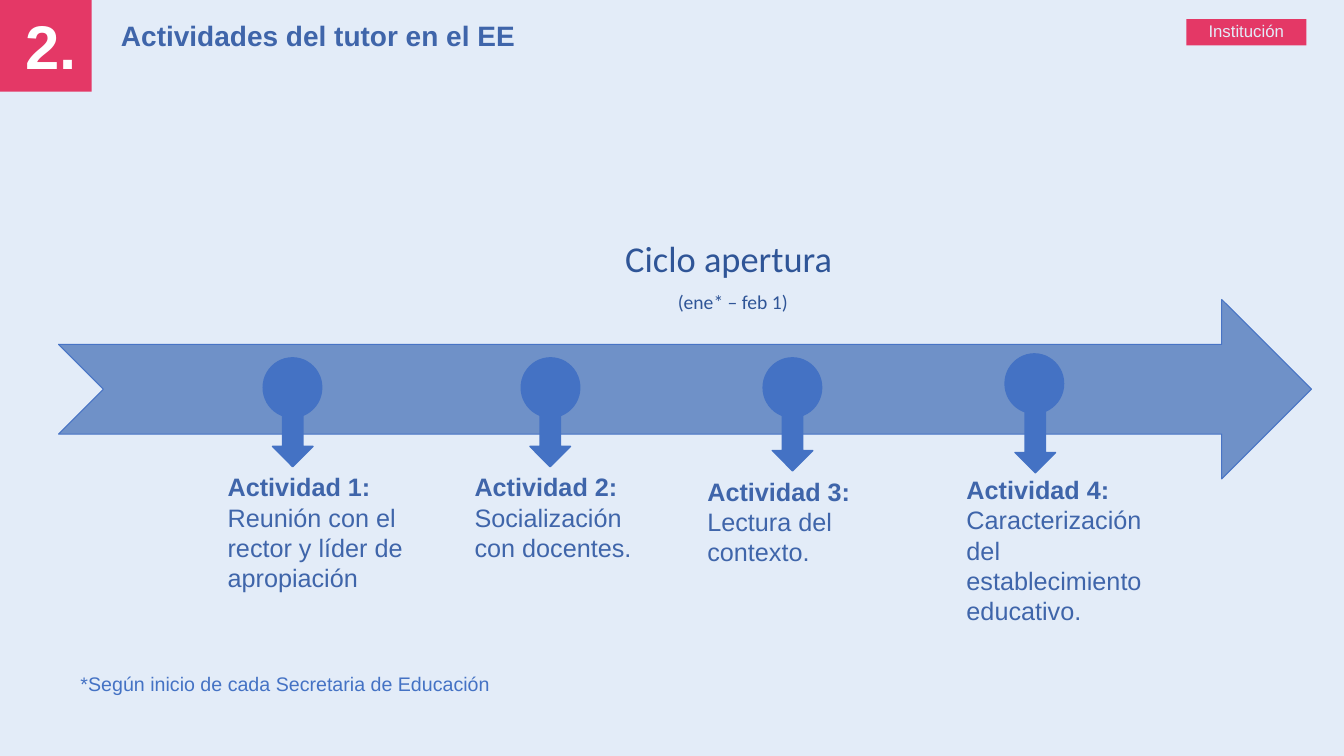
from pptx import Presentation
from pptx.dml.color import RGBColor
from pptx.enum.shapes import MSO_SHAPE
from pptx.enum.text import MSO_ANCHOR, MSO_AUTO_SIZE, PP_ALIGN
from pptx.util import Pt

HUES = {
    "back": "E3ECF8",
    "pink": "E43866",
    "white": "FFFFFF",
    "text": "3F65AA",
    "head": "2F5597",
    "band": "6F91C8",
    "edge": "4874C5",
    "mark": "4472C4",
}

STEPS = [
    ("Actividad 1: ", "Reunión con el rector y líder de apropiación",
     (155.5, 333.4, 171.4, 94.3), (188, 255.6), (194.6, 273.6)),
    ("Actividad 2: ", "Socialización con docentes.",
     (331.9, 333.4, 136, 72.7), (372.3, 255.6), (378.5, 273.6)),
    ("Actividad 3: ", "Lectura del contexto.",
     (498.2, 336.4, 126, 72.7), (545.1, 255.6), (551.6, 276.5)),
    ("Actividad 4: ", "Caracterización del establecimiento educativo.",
     (683.3, 335.4, 139.7, 116.6), (717.9, 252.8), (725, 277.9)),
]


def color(name):
    return RGBColor.from_string(HUES[name])


def style(font, size, hue, bold=False, face="Arial"):
    font.name = face
    font.size = Pt(size)
    font.bold = bold
    font.color.rgb = color(hue)


def shape(slide, kind, box, fill, line=None, width=1):
    item = slide.shapes.add_shape(kind, *map(Pt, box))
    item.shadow.inherit = False
    item.fill.solid()
    item.fill.fore_color.rgb = color(fill)
    if line:
        item.line.color.rgb = color(line)
        item.line.width = Pt(width)
    else:
        item.line.fill.background()
    return item


def label(slide, box, text, size, hue, bold=False, align=PP_ALIGN.LEFT):
    frame = slide.shapes.add_textbox(*map(Pt, box)).text_frame
    frame.word_wrap = True
    para = frame.paragraphs[0]
    para.text = text
    para.alignment = align
    style(para.font, size, hue, bold)
    return frame


def title(slide, box, text):
    item = slide.shapes.title
    item.left, item.top, item.width, item.height = map(Pt, box)
    frame = item.text_frame
    frame.auto_size = MSO_AUTO_SIZE.NONE
    frame.vertical_anchor = MSO_ANCHOR.TOP
    para = frame.paragraphs[0]
    para.text = text
    para.alignment = PP_ALIGN.LEFT
    style(para.font, 20, "text", True)


def phase(slide, box, name, dates):
    frame = label(slide, box, name, 26, "head", align=PP_ALIGN.CENTER)
    frame.vertical_anchor = MSO_ANCHOR.BOTTOM
    frame.margin_left = frame.margin_right = Pt(14.4)
    frame.margin_top = frame.margin_bottom = Pt(14.4)
    frame.add_paragraph().text = dates
    for para, size in zip(frame.paragraphs, (26, 14)):
        para.alignment = PP_ALIGN.CENTER
        para.line_spacing = 0.9
        style(para.font, size, "head", face="Calibri")
    frame.paragraphs[0].space_after = Pt(8.5)


def step(slide, name, task, box, dot, stem):
    shape(slide, MSO_SHAPE.DOWN_ARROW, (*stem, 29, 59.8), "mark", "mark")
    shape(slide, MSO_SHAPE.OVAL, (*dot, 41.8, 42.5), "mark", "mark")
    para = label(slide, box, "", 18, "text").paragraphs[0]
    for text, bold in ((name, True), (task, False)):
        run = para.add_run()
        run.text = text
        run.font.bold = bold


def main():
    deck = Presentation()
    deck.slide_width, deck.slide_height = Pt(960), Pt(540)
    slide = deck.slides.add_slide(deck.slide_layouts[5])
    slide.background.fill.solid()
    slide.background.fill.fore_color.rgb = color("back")

    title(slide, (79.2, 9.4, 620.6, 31.7), "Actividades del tutor en el EE")
    shape(slide, MSO_SHAPE.RECTANGLE, (0, 0, 65.5, 65.5), "pink")
    label(slide, (10.8, 2.2, 54.7, 60.5), "2.", 44, "white", True)
    shape(slide, MSO_SHAPE.RECTANGLE, (847.4, 13.6, 85.7, 18.8), "pink")
    label(slide, (843.8, 11.5, 92.9, 21.6), "Institución", 12, "back",
          align=PP_ALIGN.CENTER)

    shape(slide, MSO_SHAPE.NOTCHED_RIGHT_ARROW, (41.8, 213.9, 895, 128.2),
          "band", "edge", 0.75)
    phase(slide, (121, 67.7, 805, 170.6), "Ciclo apertura ", "(ene* – feb 1)")
    for item in STEPS:
        step(slide, *item)
    label(slide, (50.4, 476.6, 488.9, 24.5),
          "*Según inicio de cada Secretaria de Educación", 14, "mark")
    deck.save("out.pptx")


if __name__ == "__main__":
    main()
